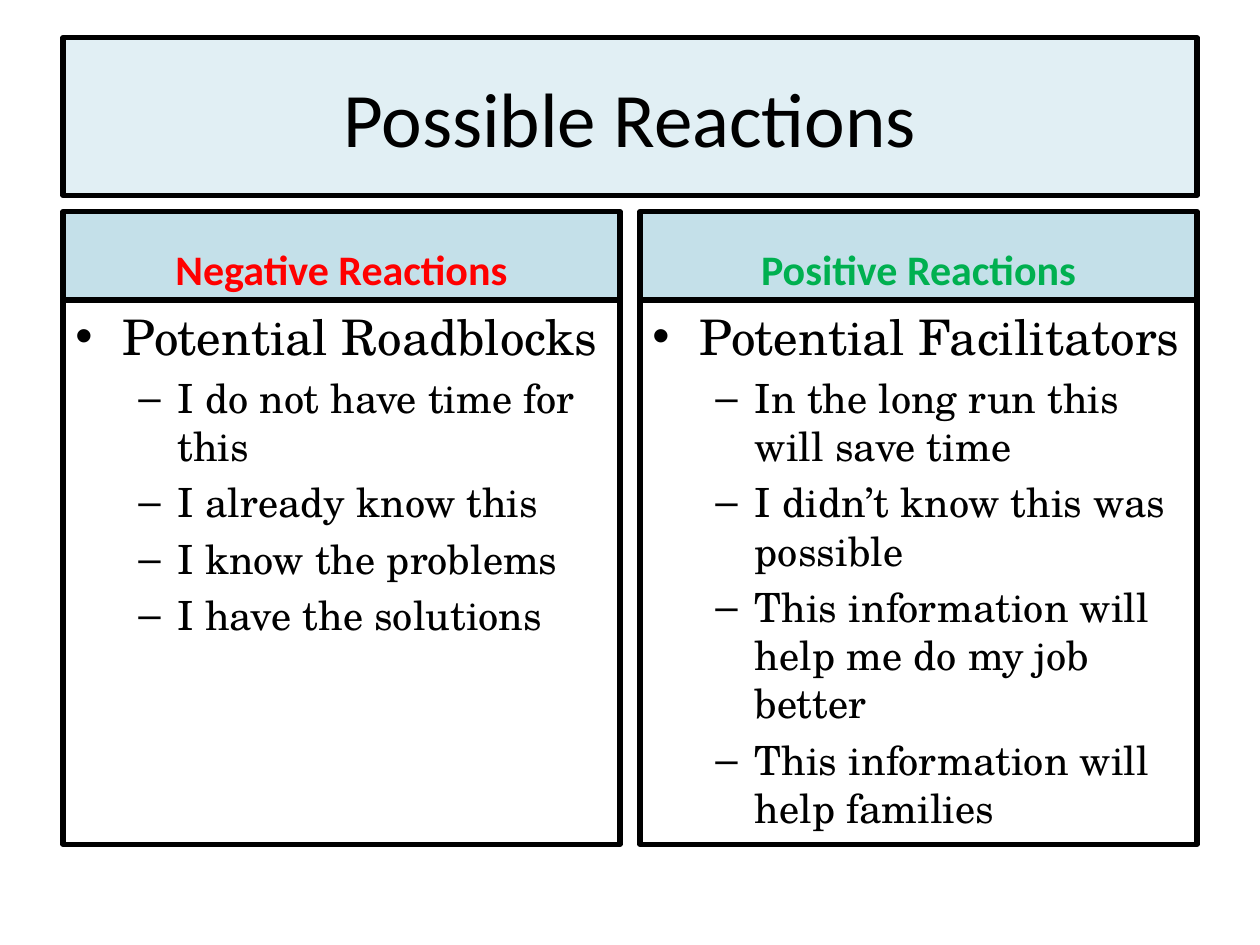
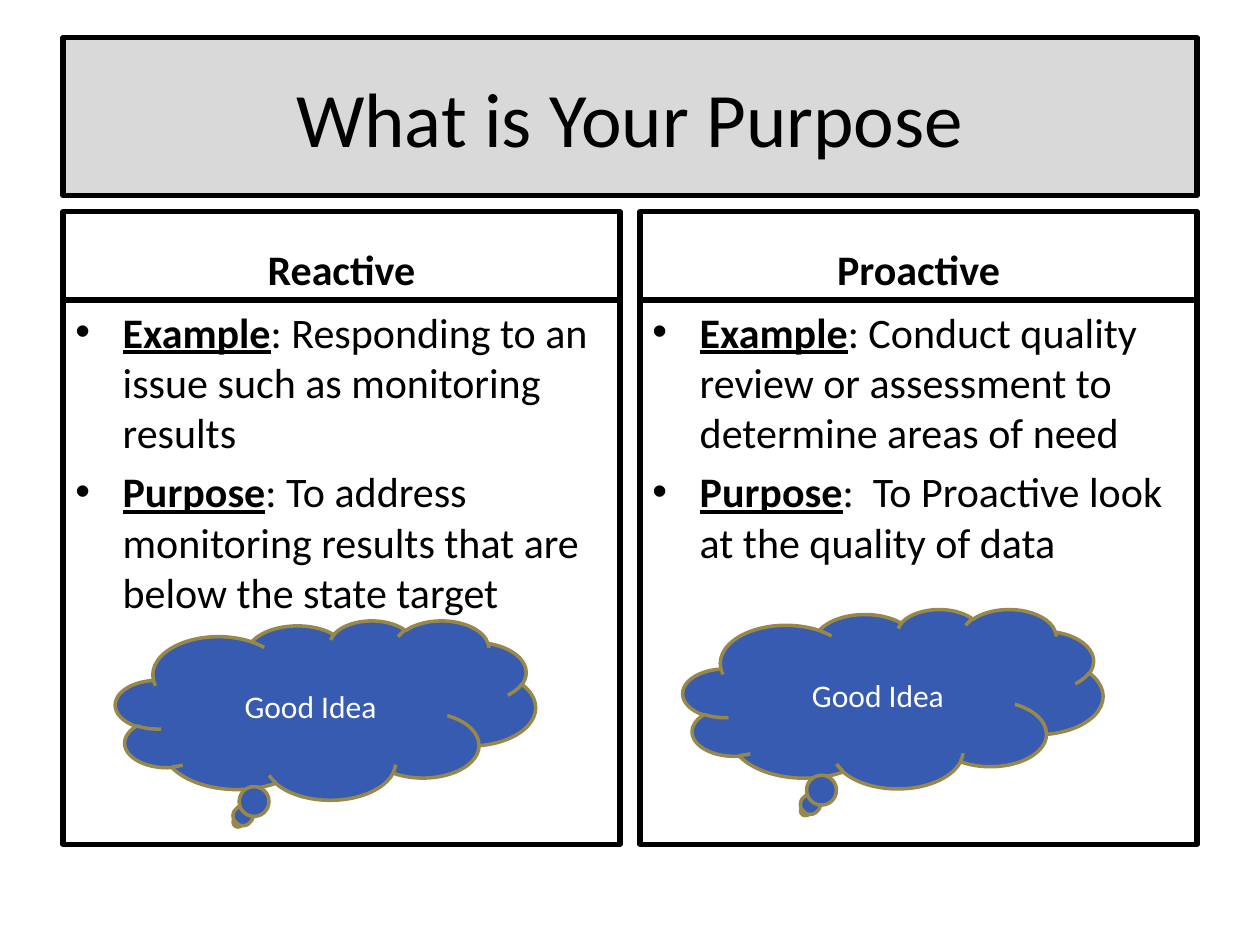
import pptx
import pptx.dml.color
import pptx.enum.shapes
import pptx.enum.text
import pptx.oxml.ns
import pptx.util
from lxml import etree

Pt = pptx.util.Pt
RGBColor = pptx.dml.color.RGBColor
SHAPE = pptx.enum.shapes.MSO_SHAPE
ALIGN = pptx.enum.text.PP_ALIGN
ANCHOR = pptx.enum.text.MSO_ANCHOR

BLACK = RGBColor(0x00, 0x00, 0x00)
WHITE = RGBColor(0xFF, 0xFF, 0xFF)
PALE_BLUE = RGBColor(0xE1, 0xEF, 0xF4)
LIGHT_BLUE = RGBColor(0xC4, 0xE0, 0xE9)
GREY = RGBColor(0xD9, 0xD9, 0xD9)
RED = RGBColor(0xFF, 0x00, 0x00)
GREEN = RGBColor(0x00, 0xB0, 0x50)
CLOUD_BLUE = RGBColor(0x37, 0x5B, 0xB0)
CLOUD_EDGE = RGBColor(0x98, 0x89, 0x4B)

SANS = "Calibri"
SERIF = "TeX Gyre Schola"

# Boxes are left, top, width, height in points
TITLE_BOX = (36, 21.6, 648, 90)
COLUMN_TOP, COLUMN_WIDTH, COLUMN_HEIGHT = 121, 318.25, 361.4
COLUMN_BOXES = [(left, COLUMN_TOP, COLUMN_WIDTH, COLUMN_HEIGHT)
                for left in (36, 684 - COLUMN_WIDTH)]
HEADING_HEIGHT = 50.4
CLOUD_SIZE = (240, 102.5)

# Bullet levels: symbol, left margin, hanging indent
BULLETS = [("•", 27, 27), ("–", 58.5, 22.5)]


def add_panel(slide, box, kind=SHAPE.RECTANGLE, fill=None, edge=BLACK,
              edge_width=3, anchor=ANCHOR.MIDDLE):
    shape = slide.shapes.add_shape(kind, *(Pt(length) for length in box))
    shape.shadow.inherit = False
    if fill is None:
        shape.fill.background()
    else:
        shape.fill.solid()
        shape.fill.fore_color.rgb = fill
    shape.line.color.rgb = edge
    shape.line.width = Pt(edge_width)
    shape.text_frame.word_wrap = True
    shape.text_frame.vertical_anchor = anchor
    return shape


def add_run(paragraph, text, size, font=SANS, color=BLACK, bold=False, underline=False):
    run = paragraph.add_run()
    run.text = text
    run.font.name = font
    run.font.size = Pt(size)
    run.font.color.rgb = color
    run.font.bold = bold
    run.font.underline = underline


def add_label(shape, text, size, **style):
    paragraph = shape.text_frame.paragraphs[0]
    paragraph.alignment = ALIGN.CENTER
    add_run(paragraph, text, size, **style)


def set_bullet(paragraph, level):
    symbol, margin, hanging = BULLETS[level]
    paragraph.level = level
    properties = paragraph._p.get_or_add_pPr()
    properties.set("marL", str(Pt(margin)))
    properties.set("indent", str(-Pt(hanging)))
    qn = pptx.oxml.ns.qn
    etree.SubElement(properties, qn("a:buFont")).set("typeface", "Arial")
    etree.SubElement(properties, qn("a:buChar")).set("char", symbol)


def add_item(text_frame, level, size):
    """Return a bulleted paragraph, using the empty first one if it is free."""
    paragraph = text_frame.paragraphs[0]
    if paragraph.runs:
        paragraph = text_frame.add_paragraph()
    paragraph.alignment = ALIGN.LEFT
    paragraph.space_before = Pt(round(size * 0.2, 1))
    set_bullet(paragraph, level)
    return paragraph


def add_title(slide, text, fill):
    add_label(add_panel(slide, TITLE_BOX, fill=fill), text, 44)


def add_column(slide, box, heading, color=BLACK, fill=None):
    """Draw a heading above an empty body; return the body's text frame."""
    left, top, width, height = box
    heading_panel = add_panel(slide, (left, top, width, HEADING_HEIGHT),
                              fill=fill, anchor=ANCHOR.BOTTOM)
    add_label(heading_panel, heading, 24, color=color, bold=True)
    body_box = (left, top + HEADING_HEIGHT, width, height - HEADING_HEIGHT)
    return add_panel(slide, body_box, anchor=ANCHOR.TOP).text_frame


def add_cloud(slide, box, offset):
    cloud_box = (box[0] + offset[0], box[1] + offset[1], *CLOUD_SIZE)
    cloud = add_panel(slide, cloud_box, SHAPE.CLOUD_CALLOUT, CLOUD_BLUE, CLOUD_EDGE, 2)
    add_label(cloud, "Good Idea", 18, color=WHITE)


def build_reactions(slide):
    add_title(slide, "Possible Reactions", PALE_BLUE)
    columns = [
        ("Negative Reactions", RED, "Potential Roadblocks",
         ["I do not have time for this", "I already know this",
          "I know the problems", "I have the solutions"]),
        ("Positive Reactions", GREEN, "Potential Facilitators",
         ["In the long run this will save time", "I didn’t know this was possible",
          "This information will help me do my job better",
          "This information will help families"]),
    ]
    for box, (heading, color, topic, reactions) in zip(COLUMN_BOXES, columns):
        body = add_column(slide, box, heading, color, LIGHT_BLUE)
        add_run(add_item(body, 0, 28), topic, 28, SERIF)
        for reaction in reactions:
            add_run(add_item(body, 1, 23), reaction, 23, SERIF)


def build_purpose(slide):
    add_title(slide, "What is Your Purpose", GREY)
    columns = [
        ("Reactive", (30, 233.5),
         [("Example", ": Responding to an issue such as monitoring results"),
          ("Purpose", ": To address monitoring results that are below the state target")]),
        ("Proactive", (24.5, 227),
         [("Example", ": Conduct quality review or assessment to determine areas of need"),
          ("Purpose", ":  To Proactive look at the quality of data")]),
    ]
    for box, (heading, cloud_offset, points) in zip(COLUMN_BOXES, columns):
        body = add_column(slide, box, heading)
        for term, explanation in points:
            paragraph = add_item(body, 0, 24)
            add_run(paragraph, term, 24, bold=True, underline=True)
            add_run(paragraph, explanation, 24)
        add_cloud(slide, box, cloud_offset)


def main():
    presentation = pptx.Presentation()
    presentation.slide_width = Pt(720)
    presentation.slide_height = Pt(540)
    blank = presentation.slide_layouts[6]
    for build in (build_reactions, build_purpose):
        build(presentation.slides.add_slide(blank))
    presentation.save("out.pptx")


if __name__ == "__main__":
    main()
